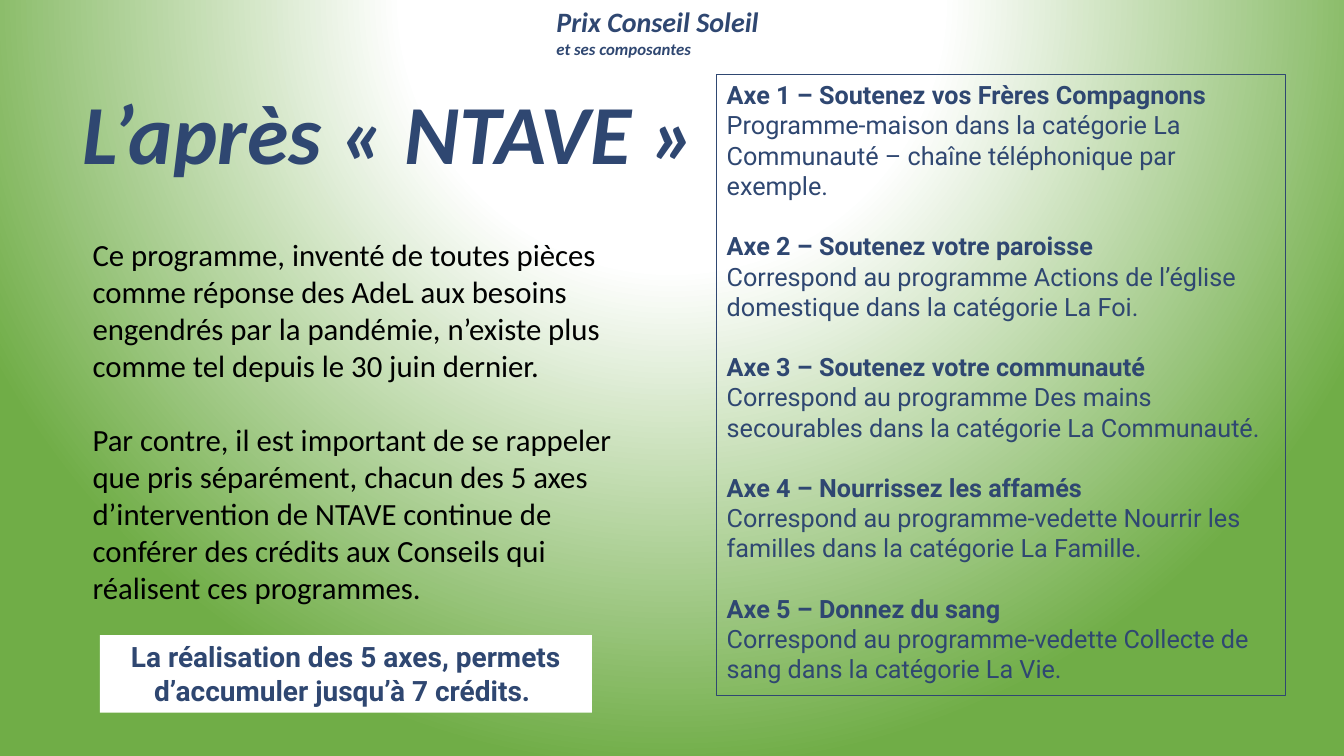
from lxml.etree import SubElement
from pptx import Presentation
from pptx.dml.color import RGBColor
from pptx.enum.shapes import MSO_SHAPE
from pptx.enum.text import MSO_ANCHOR, MSO_AUTO_SIZE, PP_ALIGN
from pptx.oxml.ns import qn
from pptx.util import Inches, Pt

NAVY = RGBColor(0x2F, 0x47, 0x71)
BLACK = RGBColor(0, 0, 0)
WHITE = RGBColor(0xFF, 0xFF, 0xFF)
GREEN = RGBColor(0x70, 0xAD, 0x47)


def write(frame, text, size, font="Calibri", color=NAVY, bold=False,
          italic=False, align=PP_ALIGN.LEFT, before=0, spacing=1.0):
    """Fill the frame's empty first paragraph, or add a new one."""
    para = frame.paragraphs[-1]
    if para.runs:
        para = frame.add_paragraph()
    para.alignment = align
    para.space_before = Pt(before)
    para.line_spacing = spacing
    run = para.add_run()
    run.text = text
    run.font.size = Pt(size)
    run.font.name = font
    run.font.color.rgb = color
    run.font.bold = bold
    run.font.italic = italic


def place(left, top, width, height, fill=None, line=None):
    """Add a rectangle and return its text frame."""
    box = slide.shapes.add_shape(MSO_SHAPE.RECTANGLE, Inches(left), Inches(top),
                                 Inches(width), Inches(height))
    box.shadow.inherit = False
    if fill is None:
        box.fill.background()
    else:
        box.fill.solid()
        box.fill.fore_color.rgb = fill
    if line is None:
        box.line.fill.background()
    else:
        box.line.color.rgb = line
        box.line.width = Pt(0.75)
    frame = box.text_frame
    frame.word_wrap = True
    frame.vertical_anchor = MSO_ANCHOR.TOP
    return frame


deck = Presentation()
deck.slide_width = Inches(13.33)
deck.slide_height = Inches(7.5)
slide = deck.slides.add_slide(deck.slide_layouts[5])

# Circular gradient centred above the slide
slide.background.fill.gradient()
grad = slide.element.find(".//" + qn("a:gradFill"))
grad.clear()
stops = SubElement(grad, qn("a:gsLst"))
for pos, color in [(0, WHITE), (35, WHITE), (100, GREEN)]:
    stop = SubElement(stops, qn("a:gs"), pos=str(pos * 1000))
    SubElement(stop, qn("a:srgbClr"), val=str(color))
focus = SubElement(grad, qn("a:path"), path="circle")
SubElement(focus, qn("a:fillToRect"), l="50000", t="-80000", r="50000", b="180000")

# Heading
head = slide.shapes.add_textbox(Inches(5.42), Inches(0), Inches(2.49), Inches(0.64))
head.text_frame.word_wrap = True
write(head.text_frame, "Prix Conseil Soleil", 20, bold=True, italic=True)
write(head.text_frame, "et ses composantes", 12, bold=True, italic=True)

# Title
title = slide.shapes.title
title.left, title.top = Inches(0.72), Inches(0.64)
title.width, title.height = Inches(11.5), Inches(1.45)
title.text_frame.auto_size = MSO_AUTO_SIZE.NONE
title.text_frame.vertical_anchor = MSO_ANCHOR.MIDDLE
write(title.text_frame, "L’après « NTAVE »", 60, bold=True, italic=True, spacing=0.9)

# Introduction
intro = slide.shapes.add_textbox(Inches(0.82), Inches(2.29), Inches(5.4), Inches(3.8))
intro.text_frame.word_wrap = True
write(intro.text_frame,
      "Ce programme, inventé de toutes pièces comme réponse des AdeL aux besoins "
      "engendrés par la pandémie, n’existe plus comme tel depuis le 30 juin dernier.",
      22, color=BLACK)
write(intro.text_frame,
      "Par contre, il est important de se rappeler que pris séparément, chacun des "
      "5 axes d’intervention de NTAVE continue de conférer des crédits aux Conseils "
      "qui réalisent ces programmes.", 22, color=BLACK, before=26.5)

# The five axes
axes = [
    ("Soutenez vos Frères Compagnons",
     "Programme-maison dans la catégorie La Communauté – chaîne téléphonique par exemple."),
    ("Soutenez votre paroisse",
     "Correspond au programme Actions de l’église domestique dans la catégorie La Foi."),
    ("Soutenez votre communauté",
     "Correspond au programme Des mains secourables dans la catégorie La Communauté."),
    ("Nourrissez les affamés",
     "Correspond au programme-vedette Nourrir les familles dans la catégorie La Famille."),
    ("Donnez du sang",
     "Correspond au programme-vedette Collecte de sang dans la catégorie La Vie."),
]
panel = place(7.11, 0.74, 5.64, 6.16, line=NAVY)
for num, (name, detail) in enumerate(axes, 1):
    write(panel, f"Axe {num} – {name}", 18, font="Roboto", bold=True,
          before=21.5 if num > 1 else 0)
    write(panel, detail, 18, font="Roboto")

# Credits
credit = place(0.99, 6.3, 4.88, 0.77, fill=WHITE)
write(credit, "La réalisation des 5 axes, permets d’accumuler jusqu’à 7 crédits. ", 20,
      font="Roboto", bold=True, align=PP_ALIGN.CENTER)

deck.save("out.pptx")
